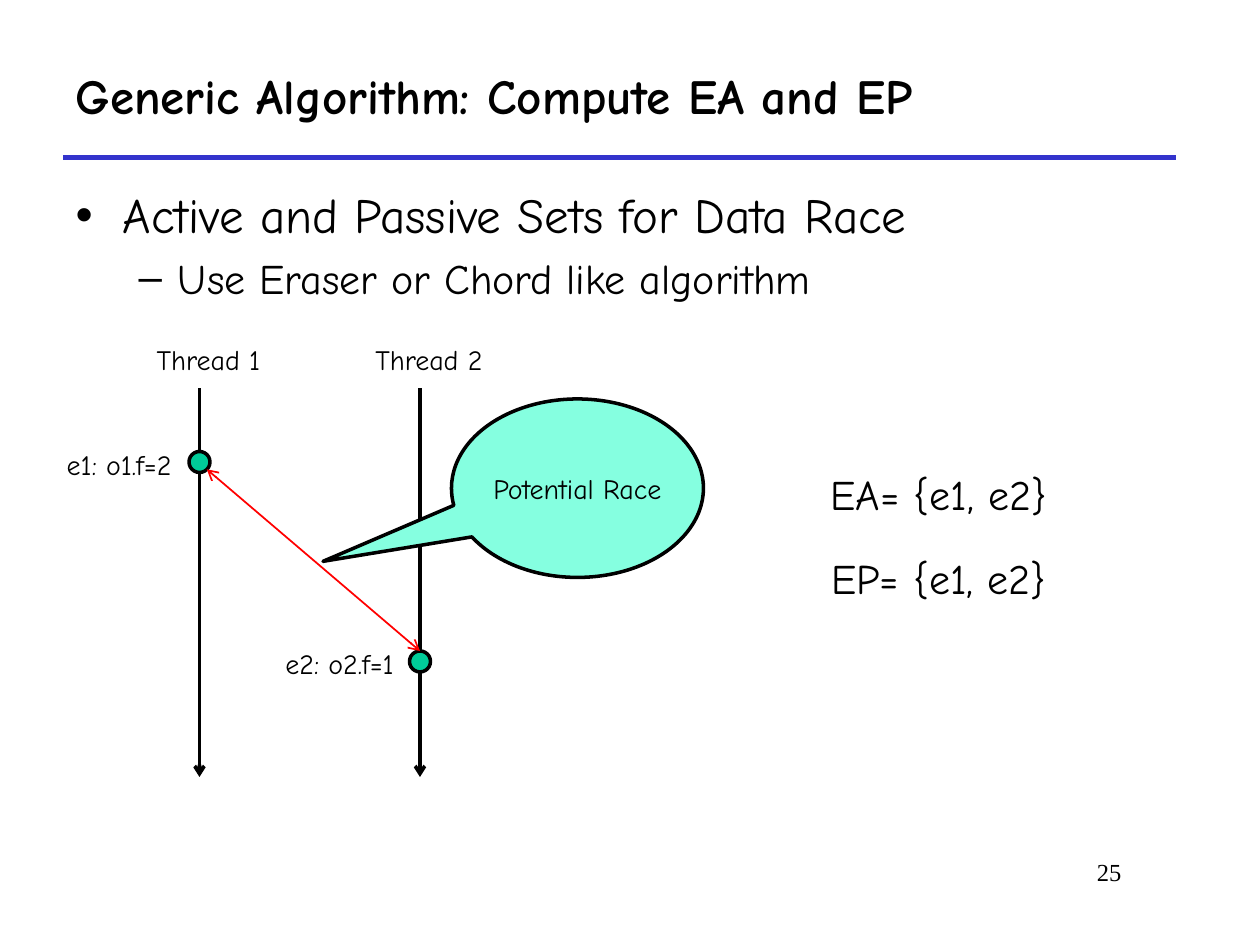
import pptx
import pptx.dml.color
import pptx.enum.shapes
import pptx.enum.text
import pptx.oxml
import pptx.oxml.ns
import pptx.util

SHAPES = pptx.enum.shapes.MSO_SHAPE
ALIGN = pptx.enum.text.PP_ALIGN
ANCHOR = pptx.enum.text.MSO_ANCHOR
BLACK, GREEN, MINT, RED, BLUE = "000000", "00CC99", "85FFE0", "FF0000", "3333CC"


def color(hex_value):
    """Turn a hex string into a colour."""
    return pptx.dml.color.RGBColor.from_string(hex_value)


class Board:
    """Hold the style and the slide, measured on a grid of 120 columns by 90 rows."""

    font = "Comic Neue"

    def __init__(self, deck):
        """Add a title-and-content slide to the deck."""
        self.cell = deck.slide_width / 120
        self.slide = deck.slides.add_slide(deck.slide_layouts[1])

    def units(self, *cells):
        """Convert grid cells to slide lengths."""
        return [pptx.util.Emu(round(count * self.cell)) for count in cells]

    def phrase(self, paragraph, text, size, bold=False, font=None):
        """Put one formatted run into a paragraph."""
        run = paragraph.add_run()
        run.text = text
        formats = {"name": font or self.font, "size": pptx.util.Pt(size), "bold": bold}
        for name, value in formats.items():
            setattr(run.font, name, value)
        run.font.color.rgb = color(BLACK)

    def placeholder(self, index, box, lines, anchor, bold=False):
        """Move a placeholder and fill it with (text, level, size) lines."""
        holder = self.slide.placeholders[index]
        for name, value in zip(("left", "top", "width", "height"), self.units(*box)):
            setattr(holder, name, value)
        frame = holder.text_frame
        frame.auto_size = pptx.enum.text.MSO_AUTO_SIZE.NONE
        frame.vertical_anchor = anchor
        for number, (text, level, size) in enumerate(lines):
            paragraph = frame.add_paragraph() if number else frame.paragraphs[0]
            paragraph.level = level
            paragraph.alignment = ALIGN.LEFT
            self.phrase(paragraph, text, size, bold)

    def label(self, text, box, size=16, align=ALIGN.CENTER, font=None):
        """Add a single-line text box."""
        frame = self.slide.shapes.add_textbox(*self.units(*box)).text_frame
        frame.word_wrap = False
        frame.paragraphs[0].alignment = align
        self.phrase(frame.paragraphs[0], text, size, font=font)

    def shape(self, kind, box, fill, text="", adjustments=()):
        """Add an outlined preset shape with optional centred text."""
        shape = self.slide.shapes.add_shape(kind, *self.units(*box))
        shape.shadow.inherit = False
        shape.fill.solid()
        shape.fill.fore_color.rgb = color(fill)
        shape.line.color.rgb = color(BLACK)
        shape.line.width = pptx.util.Pt(2)
        for number, value in enumerate(adjustments):
            shape.adjustments[number] = value
        if text:
            frame = shape.text_frame
            frame.word_wrap = False
            frame.vertical_anchor = ANCHOR.MIDDLE
            frame.paragraphs[0].alignment = ALIGN.CENTER
            self.phrase(frame.paragraphs[0], text, 16)
        return shape

    def line(self, ends, hex_value, width, arrows=(), target=None):
        """Add a straight line, optionally ending at the top of a target."""
        line = self.slide.shapes.add_connector(
            pptx.enum.shapes.MSO_CONNECTOR.STRAIGHT, *self.units(*ends))
        line.line.color.rgb = color(hex_value)
        line.line.width = pptx.util.Pt(width)
        properties = line._element.spPr
        namespace = pptx.oxml.ns.nsdecls("a")
        for end in arrows:
            properties.find(pptx.oxml.ns.qn("a:ln")).append(
                pptx.oxml.parse_xml(f'<a:{end} {namespace} type="arrow"/>'))
        properties.append(pptx.oxml.parse_xml(f"<a:effectLst {namespace}/>"))
        if target is not None:
            line.end_connect(target, 0)


def main():
    """Build the slide and save it."""
    deck = pptx.Presentation()
    deck.slide_width, deck.slide_height = pptx.util.Inches(10), pptx.util.Inches(7.5)
    board = Board(deck)

    board.line((6, 15, 112, 15), BLUE, 3)
    board.placeholder(0, (6, 4, 106, 10),
                      [("Generic Algorithm: Compute EA and EP", 0, 28)],
                      ANCHOR.MIDDLE, bold=True)
    board.placeholder(1, (6, 17, 109, 14),
                      [("Active and Passive Sets for Data Race", 0, 28),
                       ("Use Eraser or Chord like algorithm", 1, 24)], ANCHOR.TOP)
    board.label("25", (83, 81, 25, 6), 14, ALIGN.RIGHT, "Times New Roman")

    events = []
    threads = [("Thread 1", 19, "e1: o1.f=2", 44), ("Thread 2", 40, "e2: o2.f=1", 63)]
    for thread, column, access, row in threads:
        board.line((column, 37, column, 74), BLACK, 2, ["tailEnd"])
        events.append(board.shape(SHAPES.OVAL, (column - 1, row - 1, 2, 2), GREEN))
        board.label(access, (column - 15, row - 2, 14.7, 4.4))
        board.label(thread, (column - 6, 32, 13.7, 4.4))

    board.line((19.7, 44.7, 40, 62), RED, 1, ["headEnd", "tailEnd"], events[1])
    board.shape(SHAPES.OVAL_CALLOUT, (43, 38, 24, 17), MINT, "Potential Race",
                (-1.01, 0.41))
    for number, name in enumerate(("EA", "EP")):
        board.label(f"{name}= {{e1, e2}}", (77, 44 + 8 * number, 24.8, 6.1), 24)

    deck.save("out.pptx")


if __name__ == "__main__":
    main()
